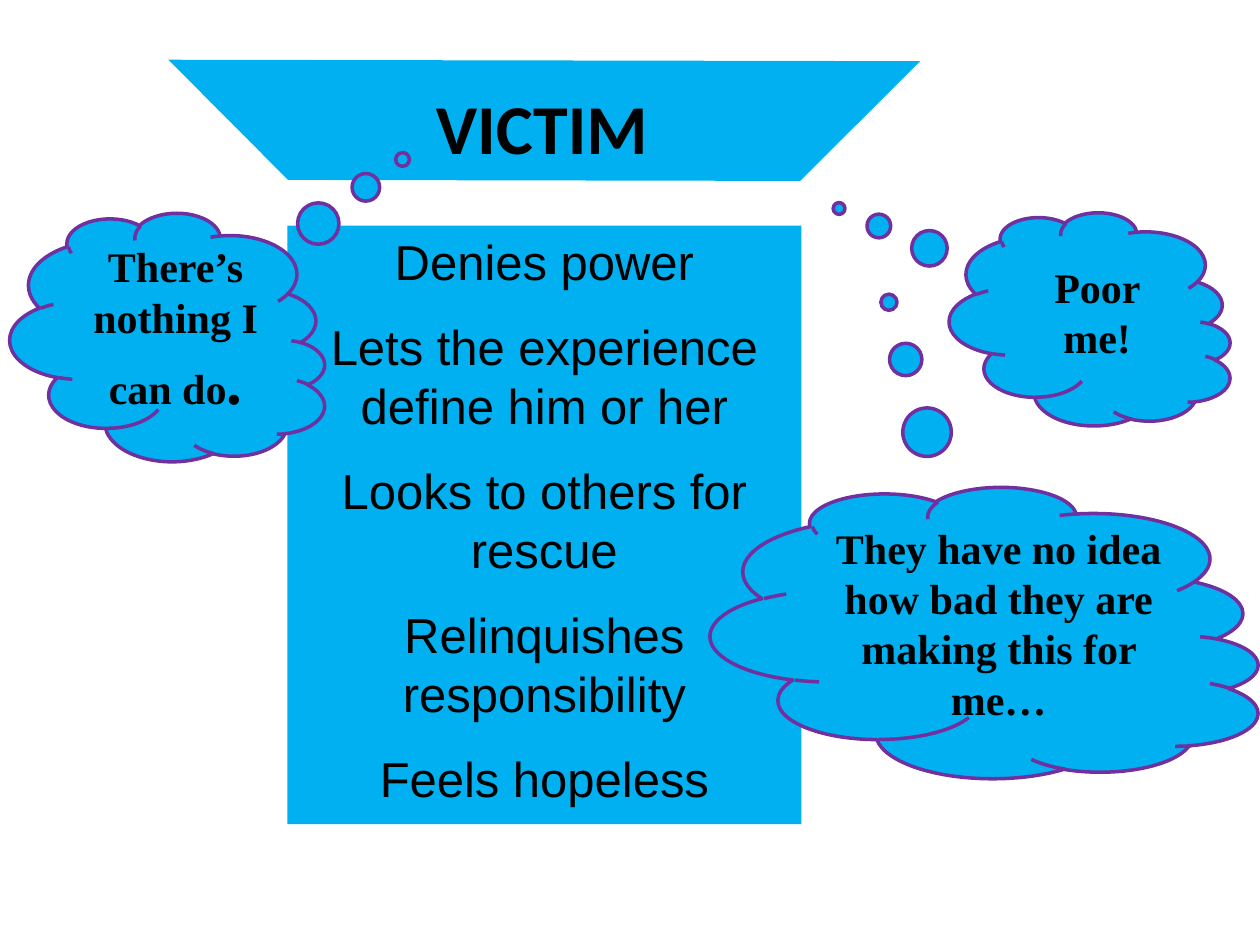
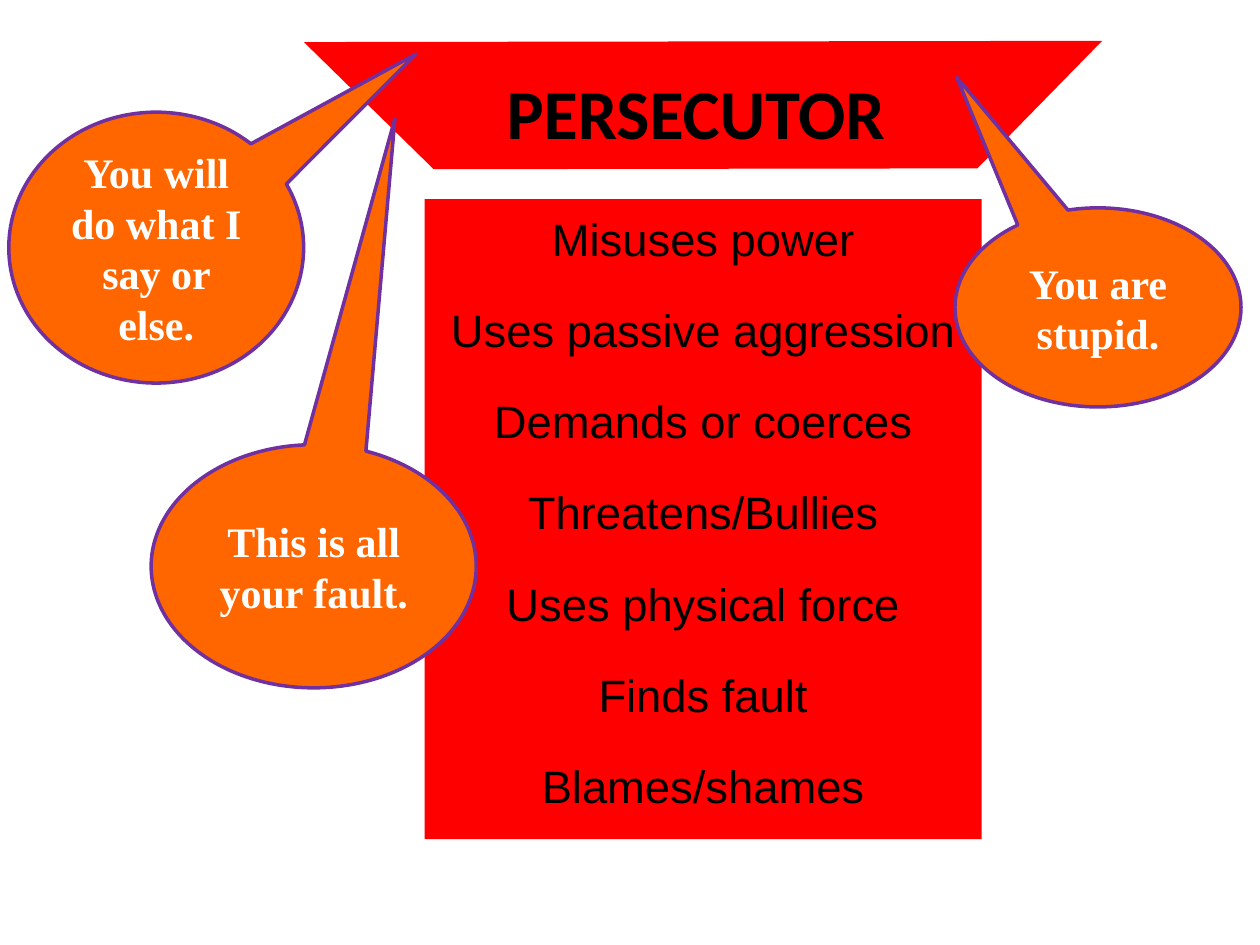
from dataclasses import dataclass

from pptx import Presentation
from pptx.dml.color import RGBColor
from pptx.enum.shapes import MSO_SHAPE
from pptx.enum.text import MSO_ANCHOR, MSO_AUTO_SIZE, PP_ALIGN
from pptx.util import Inches, Pt

RECT, STRIPE = MSO_SHAPE.RECTANGLE, MSO_SHAPE.DIAGONAL_STRIPE
CLOUD, BALLOON = MSO_SHAPE.CLOUD_CALLOUT, MSO_SHAPE.OVAL_CALLOUT
TOP, MIDDLE = MSO_ANCHOR.TOP, MSO_ANCHOR.MIDDLE
LEFT, CENTER = PP_ALIGN.LEFT, PP_ALIGN.CENTER
FIXED = MSO_AUTO_SIZE.NONE

COLORS = {"victim": "00B0F0", "persecutor": "FF0000", "speech": "FF6600",
          "outline": "7030A0", "dark": "000000", "light": "FFFFFF"}
WIDTH, HEIGHT = Inches(10), Inches(7.5)
COL, ROW = WIDTH / 100, HEIGHT / 75  # grid of 100 columns by 75 rows
TITLE_ONLY = 5
STRIPE_CUT = 0.681

Box = tuple[float, float, float, float]  # left, top, width, height in grid units


@dataclass
class Callout:
    box: Box
    tip: tuple[float, float]
    text: str
    big_end: str = ""


@dataclass
class Role:
    title: str
    title_box: Box
    color: str
    banner_box: Box
    banner_turn: float
    traits_box: Box
    traits: list[str]
    traits_format: dict
    callout_kind: int
    callout_color: str
    callout_ink: str
    callouts: list[Callout]


ROLES = [
    Role("VICTIM", (33.6, 6.2, 19.2, 7.7), "victim",
         (22.1, -16.3, 42.2, 42.2), 45.1, (22.8, 17.9, 40.8, 47.5),
         ["Denies power", "Lets the experience define him or her",
          "Looks to others for rescue", "Relinquishes responsibility",
          "Feels hopeless"],
         {"size": 28, "before": 15}, CLOUD, "victim", "dark",
         [Callout((78.1, 14.2, 16.9, 22.3), (-0.521, 0.895), "Poor me!"),
          Callout((3.5, 14.3, 19.7, 25), (-0.718, -0.744),
                  "There’s nothing I can do", "."),
          Callout((66.7, 28.5, 23.1, 43.5), (-1.137, 0.177),
                  "They have no idea how bad they are making this for me…")]),
    Role("PERSECUTOR", (39.2, 5, 33.3, 7.7), "persecutor",
         (33.2, -18.9, 45.2, 44.4), 44.4, (33.7, 15.8, 44.2, 50.8),
         ["Misuses power", "Uses passive aggression", "Demands or coerces",
          "Threatens/Bullies", "Uses physical force", "Finds fault",
          "Blames/shames"],
         {"size": 25.9, "before": 12, "after": 6, "spacing": 1.1},
         BALLOON, "speech", "light",
         [Callout((0.7, 8.9, 23.4, 21.5), (0.882, -0.715),
                  "You will do what I say or else."),
          Callout((12, 35.3, 25.8, 19.3), (0.25, -1.842),
                  "This is all your fault."),
          Callout((75.8, 16.5, 22.7, 15.8), (-0.494, -1.157),
                  "You are stupid.")]),
]


def rgb(name: str) -> RGBColor:
    return RGBColor.from_string(COLORS[name])


def place(box: Box) -> tuple[int, int, int, int]:
    left, top, width, height = box
    return int(left * COL), int(top * ROW), int(width * COL), int(height * ROW)


def add_run(p, text: str, *, size: float, font: str, color: str, bold: bool):
    r = p.add_run()
    r.text = text
    r.font.size, r.font.name, r.font.bold = Pt(size), font, bold
    r.font.color.rgb = rgb(color)


def write(sp, *lines: str, size: float, font: str, color: str = "dark",
          bold: bool = False, align=CENTER, anchor=TOP, before: float = 0,
          after: float = 0, spacing: float = 1):
    """Fill a shape with one paragraph per line; space before skips the first."""
    tf = sp.text_frame
    tf.word_wrap, tf.auto_size, tf.vertical_anchor = True, FIXED, anchor
    for i, line in enumerate(lines):
        p = tf.add_paragraph() if i else tf.paragraphs[0]
        p.alignment, p.line_spacing = align, spacing
        p.space_before, p.space_after = Pt(before if i else 0), Pt(after)
        add_run(p, line, size=size, font=font, color=color, bold=bold)


def add_filled(s, kind: int, box: Box, color: str):
    sp = s.shapes.add_shape(kind, *place(box))
    sp.shadow.inherit = False
    sp.fill.solid()
    sp.fill.fore_color.rgb = rgb(color)
    sp.line.fill.background()
    return sp


def add_banner(s, role: Role):
    """Draw the turned stripe, of which a trapezoid shows, and the title on it."""
    sp = add_filled(s, STRIPE, role.banner_box, role.color)
    sp.adjustments[0] = STRIPE_CUT
    sp.rotation = role.banner_turn
    for flip in ("flipH", "flipV"):
        sp._element.spPr.xfrm.set(flip, "1")
    title = s.shapes.title
    title.left, title.top, title.width, title.height = place(role.title_box)
    write(title, role.title, size=40, font="Calibri", bold=True, align=LEFT)
    sp._element.addnext(title._element)


def add_callout(s, role: Role, callout: Callout):
    sp = add_filled(s, role.callout_kind, callout.box, role.callout_color)
    sp.line.color.rgb, sp.line.width = rgb("outline"), Pt(2)
    for i, offset in enumerate(callout.tip):
        sp.adjustments[i] = offset
    style = {"font": "Times New Roman", "color": role.callout_ink, "bold": True}
    write(sp, callout.text, size=24, anchor=MIDDLE, **style)
    if callout.big_end:
        add_run(sp.text_frame.paragraphs[0], callout.big_end, size=36, **style)
    if role.callout_kind == CLOUD:  # clouds lie on their side, text stays level
        sp.rotation = 90
        sp.text_frame._txBody.bodyPr.set("vert", "vert270")


def add_role_slide(prs, role: Role):
    s = prs.slides.add_slide(prs.slide_layouts[TITLE_ONLY])
    traits = add_filled(s, RECT, role.traits_box, role.color)
    write(traits, *role.traits, font="Arial", **role.traits_format)
    add_banner(s, role)
    for callout in role.callouts:
        add_callout(s, role, callout)


def main():
    prs = Presentation()
    prs.slide_width, prs.slide_height = WIDTH, HEIGHT
    for role in ROLES:
        add_role_slide(prs, role)
    prs.save("out.pptx")


if __name__ == "__main__":
    main()
